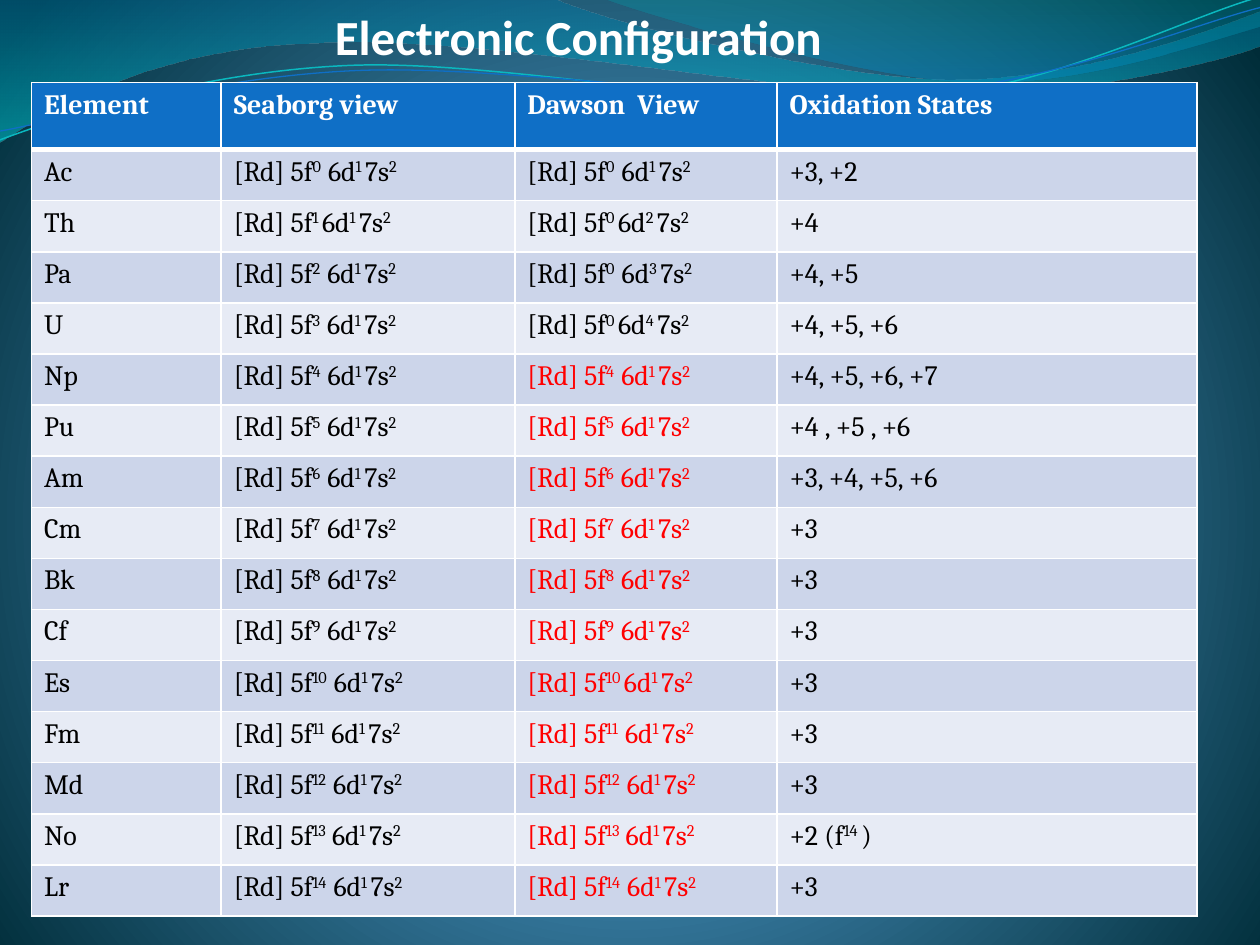
"""Build the slide on electronic configurations of the actinides."""
from math import cos, radians, sin

from lxml.etree import SubElement
from pptx import Presentation
from pptx.dml.color import RGBColor
from pptx.enum.text import MSO_ANCHOR as Anchor, MSO_AUTO_SIZE as AutoSize, PP_ALIGN as Align
from pptx.oxml.ns import qn
from pptx.util import Pt

HEADERS = ["Element", "Seaborg view", "Dawson  View", "Oxidation States"]
ELEMENTS = [
    ("Ac", "+3, +2"), ("Th", "+4"), ("Pa", "+4, +5"), ("U", "+4, +5, +6"),
    ("Np", "+4, +5, +6, +7"), ("Pu", "+4 , +5 , +6"), ("Am", "+3, +4, +5, +6"),
    ("Cm", "+3"), ("Bk", "+3"), ("Cf", "+3"), ("Es", "+3"), ("Fm", "+3"),
    ("Md", "+3"), ("No", "+2 (f^14 ^)"), ("Lr", "+3"),
]
SEABORG_GAPS = {"Th": " ^", "No": "^ "}
DAWSON_GAPS = {"Th": " ^", "U": " ^", "Es": " ^", "No": "^ "}
COL_WIDTHS = [108.4, 167.8, 149.8, 240]
WIDE_WAVE = [
    [(0, 0)], [(316.8, -0.7)],
    [(342.7, 12.2), (478.1, 45.4), (545.8, 45.4)],
    [(614.2, 45.4), (689.8, 18.7), (720, 6.5)],
    [(720.7, 25.9)],
    [(707.8, 31.7), (626.4, 54.7), (537.1, 54)],
    [(447.8, 54), (275, 20.2), (185, 24.5)],
    [(92.9, 25.9), (33.1, 59.8), (-0.7, 81.4)],
    [(0, 0)],
]
RIGHT_WAVE = [
    [(344.9, -0.7)],
    [(366.5, 7.9), (491, 44.6), (553.7, 46.8)],
    [(616.3, 49.7), (691.9, 23), (720, 15.1)],
    [(720, 0)], [(344.9, -0.7)],
]
TEAL_LINE = [
    [(0, 79.9)],
    [(34.6, 67), (113.8, 41), (199.4, 37.4)],
    [(284.4, 33.8), (427, 64.1), (513.4, 57.6)],
    [(599.8, 51.1), (675.4, 10.8), (718.6, -1.4)],
]
BLUE_LINE = [
    [(0, 74.9)],
    [(33.8, 69.1), (118.1, 43.9), (203.8, 40.3)],
    [(290.2, 36.7), (429.8, 60.5), (516.2, 54)],
    [(601.9, 48.2), (677.5, 15.1), (720, 4.3)],
]


def rgb(value):
    """Turn a hex string into a colour."""
    return RGBColor.from_string(value)


def turn(points, angle, cx=359.3, cy=41.8):
    """Turn points clockwise around a centre."""
    c, n = cos(radians(angle)), sin(radians(angle))
    return [(cx + (x - cx) * c - (y - cy) * n, cy + (x - cx) * n + (y - cy) * c) for x, y in points]


def config(f, d, gap):
    """Write an electron configuration with carets around superscripts."""
    return f"[Rd] 5f^{f}{gap}6d^{d} ^7s^2"


class Deck:
    """Hold the style and the current slide."""

    head_font, body_font = "Calibri", "Cambria"
    white, black, red, blue = "FFFFFF", "000000", "FF0000", "0F6FC6"
    bands = ("CCD5EA", "E7EBF5")

    def __init__(self):
        """Start a presentation with one title-only slide."""
        self.prs = Presentation()
        self.prs.slide_width, self.prs.slide_height = Pt(720), Pt(540)
        self.s = self.prs.slides.add_slide(self.prs.slide_layouts[5])

    def gradient(self, fill, element, stops, circle=None):
        """Apply a vertical gradient, or a circular one around a rectangle."""
        fill.gradient()
        grad = element.find(".//" + qn("a:gradFill"))
        for child in list(grad):
            grad.remove(child)
        gs_list = SubElement(grad, qn("a:gsLst"))
        for pos, color, alpha in stops:
            gs = SubElement(gs_list, qn("a:gs"), pos=str(pos * 1000))
            clr = SubElement(gs, qn("a:srgbClr"), val=color)
            if alpha < 100:
                SubElement(clr, qn("a:alpha"), val=str(alpha * 1000))
        if circle:
            way = SubElement(grad, qn("a:path"), path="circle")
            SubElement(way, qn("a:fillToRect"), {k: str(v * 1000) for k, v in zip("ltrb", circle)})
        else:
            SubElement(grad, qn("a:lin"), ang="5400000", scaled="1")

    def background(self, stops, circle):
        """Fill the slide background."""
        bg = self.s.background
        self.gradient(bg.fill, self.s.element, stops, circle)

    def outline(self, segments, close):
        """Add a freeform of straight and cubic segments."""
        pts = [(Pt(x), Pt(y)) for seg in segments for x, y in seg]
        fb = self.s.shapes.build_freeform(*pts[0])
        fb.add_line_segments(pts[1:], close=close)
        sp = fb.convert_to_shape()
        sp.shadow.inherit = False
        track = sp.element.find(".//" + qn("a:path"))
        steps = iter(track.findall(qn("a:lnTo")))
        for seg in segments[1:]:
            first, *others = [next(steps) for _ in seg]
            if others:
                first.tag = qn("a:cubicBezTo")
            for step in others:
                first.append(step[0])
                track.remove(step)
        return sp

    def wave(self, segments, stops):
        """Add a filled wave."""
        sp = self.outline(segments, True)
        sp.line.fill.background()
        self.gradient(sp.fill, sp.element.spPr, stops)

    def curve(self, segments, color, width, angle=2.7):
        """Add a slightly tilted curved line."""
        sp = self.outline([turn(seg, angle) for seg in segments], False)
        sp.rotation = 360 - angle
        sp.fill.background()
        sp.line.color.rgb = rgb(color)
        sp.line.width = Pt(width)

    def run(self, p, text, font, size, color, bold):
        """Add one run to a paragraph."""
        r = p.add_run()
        r.text = text
        r.font.name, r.font.size, r.font.bold = font, Pt(size), bold
        r.font.color.rgb = rgb(color)
        return r

    def title(self, text, x, y, w, h):
        """Place and format the title in front."""
        sp = self.s.shapes.title
        self.s.shapes.element.append(sp.element)
        sp.left, sp.top, sp.width, sp.height = Pt(x), Pt(y), Pt(w), Pt(h)
        tf = sp.text_frame
        tf.auto_size, tf.word_wrap = AutoSize.NONE, True
        tf.vertical_anchor, tf.margin_left = Anchor.TOP, Pt(20)
        p = tf.paragraphs[0]
        p.alignment = Align.CENTER
        self.run(p, text, self.head_font, 28, self.white, True)

    def cell(self, cell, text, fill, color, header):
        """Fill a cell, write its text and draw its borders."""
        tc_pr = cell._tc.get_or_add_tcPr()
        for side in "LRTB" if header else "LRB":
            width = 3 if header and side == "B" else 1
            ln = SubElement(tc_pr, qn(f"a:ln{side}"), w=str(Pt(width)))
            SubElement(SubElement(ln, qn("a:solidFill")), qn("a:srgbClr"), val=self.white)
        cell.fill.solid()
        cell.fill.fore_color.rgb = rgb(fill)
        p = cell.text_frame.paragraphs[0]
        for i, part in enumerate(text.split("^")):
            r = self.run(p, part, self.body_font, 16, color, header)
            if i % 2:
                r.font._element.set("baseline", "30000")

    def table(self, rows, x, y, widths, head_h, row_h):
        """Add the table, a list of rows of text and colour."""
        height = head_h + row_h * (len(rows) - 1)
        tbl = self.s.shapes.add_table(len(rows), len(widths), Pt(x), Pt(y), Pt(sum(widths)), Pt(height)).table
        for col, w in zip(tbl.columns, widths):
            col.width = Pt(w)
        for i, row in enumerate(rows):
            tbl.rows[i].height = Pt(row_h if i else head_h)
            fill = self.bands[(i - 1) % 2] if i else self.blue
            for j, (text, color) in enumerate(row):
                self.cell(tbl.cell(i, j), text, fill, color, i == 0)


def main():
    """Build and save the slide."""
    deck = Deck()
    deck.background([(0, "4AA0D6", 100), (25, "4C98C7", 100), (100, "002C38", 100)], (10, 110, 10, 100))
    deck.wave(WIDE_WAVE, [(0, "0074A1", 45), (100, "00C6CF", 55)])
    deck.wave(RIGHT_WAVE, [(0, "00A1A9", 30), (80, "008BBF", 45)])
    deck.curve(TEAL_LINE, "0AB8BF", 0.85)
    deck.curve(BLUE_LINE, deck.blue, 0.75)

    rows = [[(text, deck.white) for text in HEADERS]]
    for n, (name, states) in enumerate(ELEMENTS):
        f, d, color = (0, n + 1, deck.black) if n < 4 else (n, 1, deck.red)
        rows.append([
            (name, deck.black),
            (config(n, 1, SEABORG_GAPS.get(name, "  ^")), deck.black),
            (config(f, d, DAWSON_GAPS.get(name, "  ^")), color),
            (states, deck.black),
        ])
    deck.table(rows, 18, 47.2, COL_WIDTHS, 38.3, 29.2)
    deck.title("Electronic Configuration", 42, 0, 564, 41)
    deck.prs.save("out.pptx")


if __name__ == "__main__":
    main()
